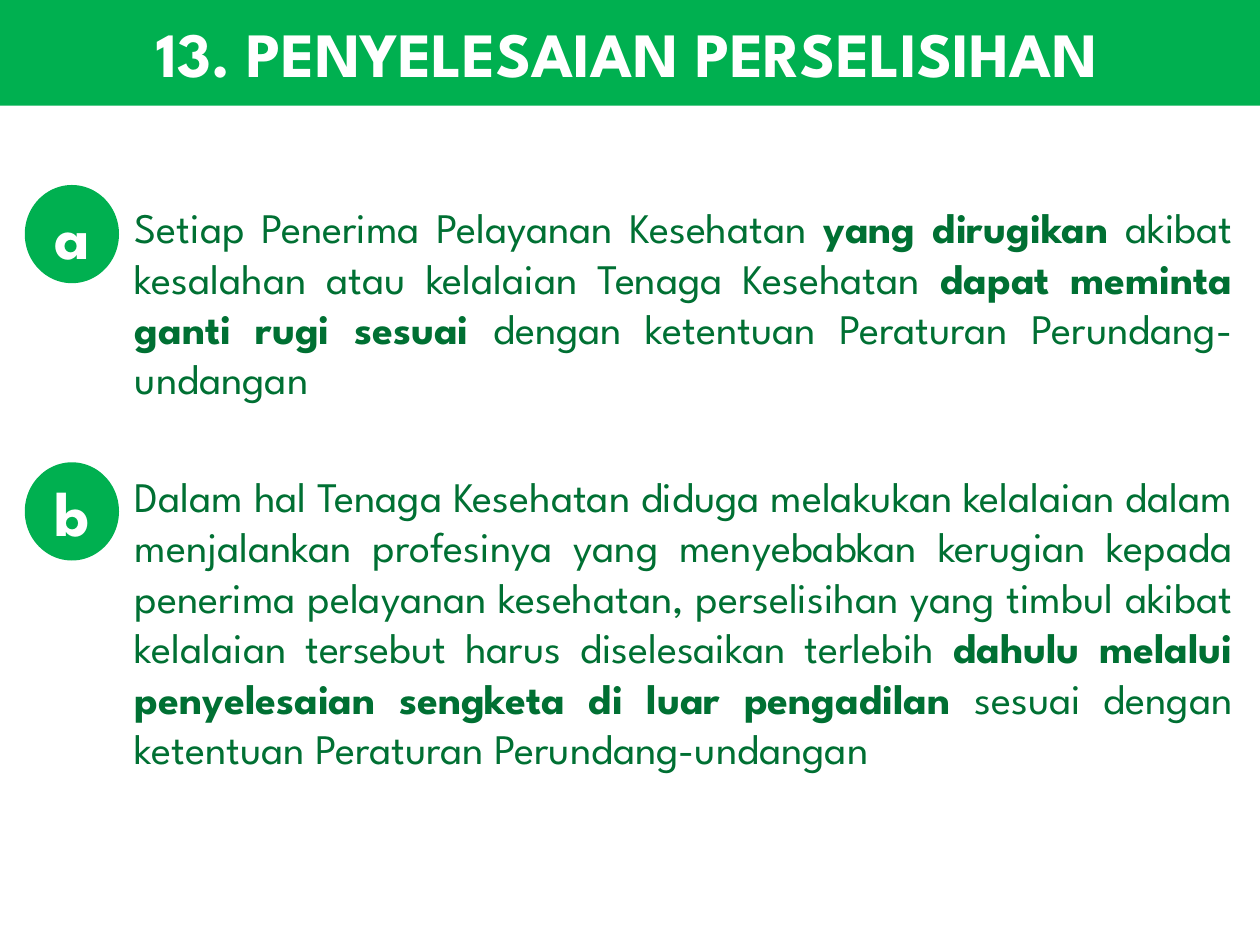
"""Build the slide on dispute settlement: a title banner and two lettered clauses."""
from dataclasses import dataclass

from pptx import Presentation
from pptx.dml.color import RGBColor
from pptx.enum.shapes import MSO_SHAPE as Shape
from pptx.enum.text import MSO_ANCHOR as Anchor, PP_ALIGN as Align
from pptx.slide import Slide
from pptx.text.text import _Run as Run
from pptx.util import Cm, Pt


@dataclass(frozen=True)
class Theme:
    font: str = "League Spartan"
    fill: RGBColor = RGBColor(0x00, 0xB0, 0x50)
    light: RGBColor = RGBColor(0xFF, 0xFF, 0xFF)
    dark: RGBColor = RGBColor(0x00, 0x70, 0x33)
    heading: Pt = Pt(36)
    body: Pt = Pt(24)
    clause_gap: Pt = Pt(38.4)


@dataclass(frozen=True)
class Box:
    left: float
    top: float
    width: float
    height: float

    def lengths(self) -> tuple[Cm, Cm, Cm, Cm]:
        return Cm(self.left), Cm(self.top), Cm(self.width), Cm(self.height)


@dataclass(frozen=True)
class Span:
    text: str
    bold: bool = False


@dataclass(frozen=True)
class Clause:
    letter: str
    spans: tuple[Span, ...]


THEME = Theme()
BANNER = Box(-0.1, 0, 25.5, 2.13)
BODY = Box(1.5, 3.94, 23.6, 14.2)
BADGE = Box(0.5, 3.73, 1.9, 1.98)
BADGE_PITCH = 5.59
BODY_INDENT = 1.22
TITLE = "13. PENYELESAIAN PERSELISIHAN"
CLAUSES = (
    Clause("a", (
        Span("Setiap Penerima Pelayanan Kesehatan "),
        Span("yang dirugikan ", True),
        Span("akibat kesalahan atau kelalaian Tenaga Kesehatan "),
        Span("dapat meminta ganti rugi sesuai ", True),
        Span("dengan ketentuan Peraturan Perundang-undangan"),
    )),
    Clause("b", (
        Span("Dalam hal Tenaga Kesehatan diduga melakukan kelalaian dalam "
             "menjalankan profesinya yang menyebabkan kerugian kepada penerima "
             "pelayanan kesehatan, perselisihan yang timbul akibat kelalaian "
             "tersebut harus diselesaikan terlebih "),
        Span("dahulu melalui penyelesaian sengketa di luar pengadilan ", True),
        Span("sesuai dengan ketentuan Peraturan Perundang-undangan"),
    )),
)


def style_run(r: Run, size: Pt, color: RGBColor, bold: bool) -> None:
    r.font.name = THEME.font
    r.font.size = size
    r.font.bold = bold
    r.font.color.rgb = color


def add_label(s: Slide, kind: Shape, box: Box, text: str) -> None:
    sp = s.shapes.add_shape(kind, *box.lengths())
    sp.shadow.inherit = False
    sp.fill.solid()
    sp.fill.fore_color.rgb = THEME.fill
    sp.line.fill.background()
    tf = sp.text_frame
    tf.text = text
    tf.vertical_anchor = Anchor.MIDDLE
    p = tf.paragraphs[0]
    p.alignment = Align.CENTER
    style_run(p.runs[0], THEME.heading, THEME.light, True)


def add_clauses(s: Slide, box: Box, clauses: tuple[Clause, ...]) -> None:
    tf = s.shapes.add_textbox(*box.lengths()).text_frame
    tf.word_wrap = True
    tf.margin_left = Cm(BODY_INDENT)
    for i, clause in enumerate(clauses):
        p = tf.add_paragraph() if i else tf.paragraphs[0]
        p.alignment = Align.JUSTIFY
        if i:
            p.space_before = THEME.clause_gap
        for span in clause.spans:
            r = p.add_run()
            r.text = span.text
            style_run(r, THEME.body, THEME.dark, span.bold)


def main() -> None:
    prs = Presentation()
    prs.slide_width, prs.slide_height = Cm(25.4), Cm(19.05)
    s = prs.slides.add_slide(prs.slide_layouts[6])
    add_clauses(s, BODY, CLAUSES)
    add_label(s, Shape.RECTANGLE, BANNER, TITLE)
    for i, clause in enumerate(CLAUSES):
        badge = Box(BADGE.left, BADGE.top + i * BADGE_PITCH, BADGE.width, BADGE.height)
        add_label(s, Shape.OVAL, badge, clause.letter)
    prs.save("out.pptx")


if __name__ == "__main__":
    main()
